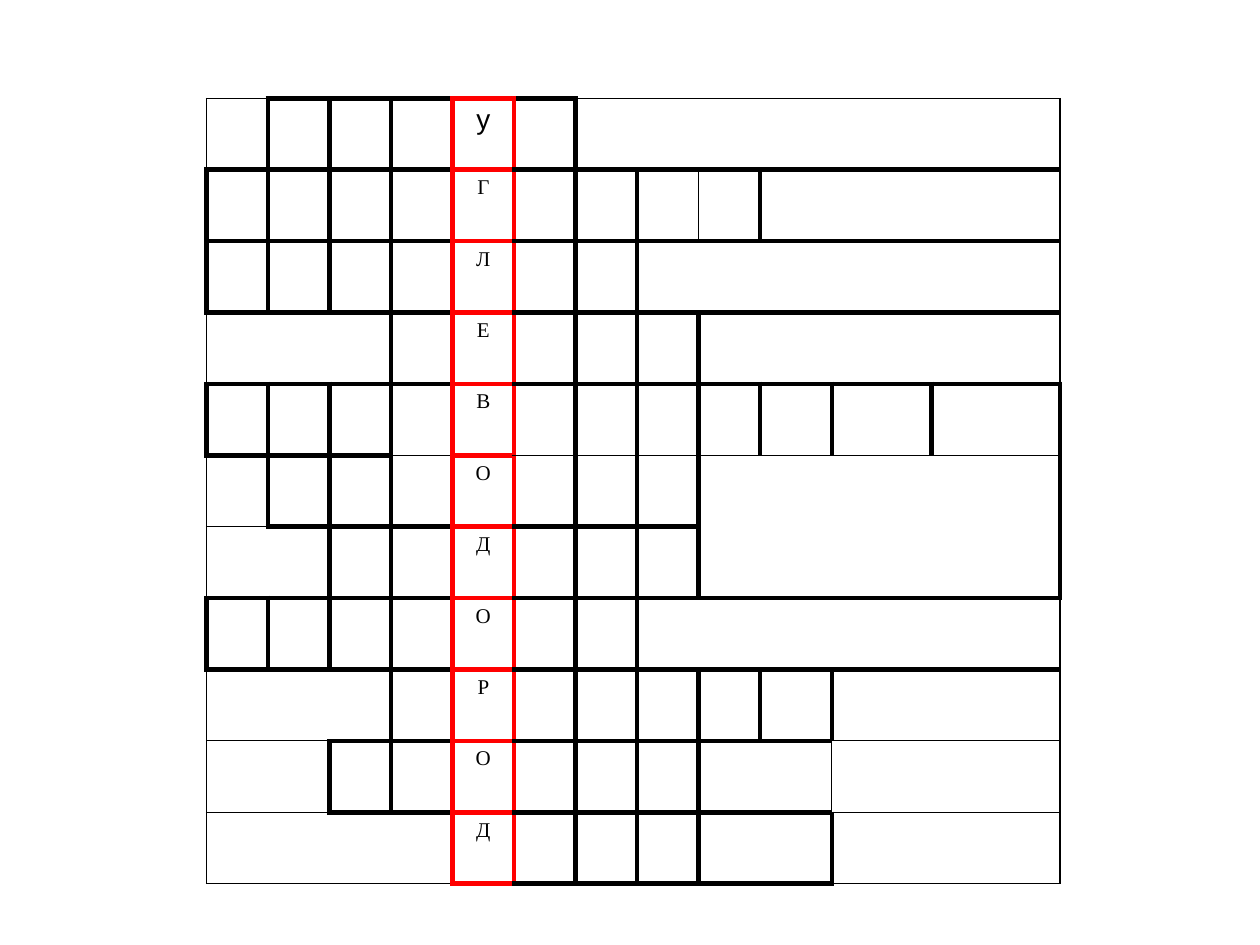
from dataclasses import dataclass

from lxml.etree import SubElement
from pptx import Presentation
from pptx.dml.color import RGBColor
from pptx.enum.text import PP_ALIGN as Align
from pptx.oxml.ns import qn
from pptx.table import Table, _Cell as TableCell
from pptx.util import Pt


@dataclass(frozen=True)
class Theme:
    ink: str = "000000"
    keyword: str = "FF0000"
    thick: float = 3
    medium: float = 1
    thin: float = 0.75
    first_font: str = "Arial"
    first_size: float = 16
    font: str = "Times New Roman"
    size: float = 12


THEME = Theme()
THICK, MEDIUM, THIN = THEME.thick, THEME.medium, THEME.thin


@dataclass(frozen=True)
class Box:
    """A crossword cell: how many columns and rows it covers, and its edge widths."""
    columns: int = 1
    rows: int = 1
    left: float = THICK
    top: float = THICK
    right: float = THICK
    bottom: float = THICK


KEYWORD = "уГЛЕВОДОРОД"
KEYWORD_COLUMN = 4
TABLE_LEFT, TABLE_TOP = 118, 56.2
COLUMN_WIDTHS = [35.15] * 9 + [41, 56.8, 73.6]
ROW_HEIGHT = 40.8
INDENT = 23
NO_STYLE = "{2D5ABB26-0587-4C30-8999-92F81FD0307C}"

# Boxes that differ from a single thick-edged cell, by (row, column).
BOXES = {
    (0, 0): Box(left=THIN, top=THIN),
    (0, 6): Box(6, top=THIN, right=THIN),
    (1, 7): Box(right=MEDIUM),
    (1, 8): Box(left=MEDIUM),
    (1, 9): Box(3, top=THIN, right=THIN, bottom=THIN),
    (2, 7): Box(5, right=THIN),
    (3, 0): Box(3, left=THIN),
    (3, 8): Box(4, top=THIN, right=THIN),
    **{(4, column): Box(bottom=MEDIUM) for column in (3, *range(5, 12))},
    (5, 0): Box(left=THIN, bottom=THIN),
    **{(5, column): Box(top=MEDIUM) for column in (3, 5, 6, 7)},
    (5, 8): Box(4, 2, top=MEDIUM, bottom=THIN),
    (6, 0): Box(2, left=THIN, top=THIN),
    (7, 7): Box(5, right=THIN),
    (8, 0): Box(3, left=THIN, bottom=THIN),
    (8, 10): Box(2, top=THIN, right=THIN, bottom=THIN),
    (9, 0): Box(2, left=THIN, top=THIN, bottom=THIN),
    (9, 8): Box(2, right=THIN),
    (9, 10): Box(2, left=THIN, top=THIN, right=THIN, bottom=THIN),
    (10, 0): Box(4, left=THIN, top=THIN, bottom=THIN),
    (10, 8): Box(2),
    (10, 10): Box(2, top=THIN, right=THIN, bottom=THIN),
}


def add_edge(cell: TableCell, tag: str, width: float, color: str) -> None:
    properties = cell._tc.get_or_add_tcPr()
    line = SubElement(properties, qn(tag), w=str(Pt(width)), cap="flat", cmpd="sng")
    SubElement(SubElement(line, qn("a:solidFill")), qn("a:srgbClr"), val=color)
    SubElement(line, qn("a:prstDash"), val="solid")


def draw_box(table: Table, row: int, column: int, box: Box) -> None:
    """Merge the covered cells and draw the edges, red beside the keyword."""
    last_row, last_column = row + box.rows - 1, column + box.columns - 1
    in_keyword = column == KEYWORD_COLUMN
    across = THEME.keyword if in_keyword else THEME.ink
    left = THEME.keyword if in_keyword or column == KEYWORD_COLUMN + 1 else THEME.ink
    right = THEME.keyword if in_keyword or last_column == KEYWORD_COLUMN - 1 else THEME.ink
    if box.columns > 1 or box.rows > 1:
        table.cell(row, column).merge(table.cell(last_row, last_column))
    for y in range(row, last_row + 1):
        for x in range(column, last_column + 1):
            cell = table.cell(y, x)
            origin = (y, x) == (row, column)
            edges = (
                ("a:lnL", x == column, box.left, left),
                ("a:lnR", x == last_column, box.right, right),
                ("a:lnT", y == row, box.top, across),
                ("a:lnB", y == last_row, box.bottom, across),
            )
            for tag, outer, width, color in edges:
                if outer or origin:
                    add_edge(cell, tag, width, color)
            cell.fill.background()


def write_letter(cell: TableCell, letter: str, font: str, size: float) -> None:
    paragraph = cell.text_frame.paragraphs[0]
    paragraph.alignment = Align.CENTER
    properties = paragraph._p.get_or_add_pPr()
    properties.set("marL", str(Pt(INDENT)))
    properties.set("indent", str(-Pt(INDENT)))
    run = paragraph.add_run()
    run.text = letter
    run.font.name = font
    run.font.size = Pt(size)
    run.font.color.rgb = RGBColor.from_string(THEME.ink)


def add_crossword(slide) -> None:
    row_count, column_count = len(KEYWORD), len(COLUMN_WIDTHS)
    frame = slide.shapes.add_table(
        row_count, column_count, Pt(TABLE_LEFT), Pt(TABLE_TOP),
        Pt(sum(COLUMN_WIDTHS)), Pt(ROW_HEIGHT * row_count))
    table = frame.table
    table.first_row = table.horz_banding = False
    table._tbl.tblPr.find(qn("a:tableStyleId")).text = NO_STYLE
    for column, width in zip(table.columns, COLUMN_WIDTHS):
        column.width = Pt(width)
    for row in table.rows:
        row.height = Pt(ROW_HEIGHT)
    for y, letter in enumerate(KEYWORD):
        for x in range(column_count):
            if not table.cell(y, x).is_spanned:
                draw_box(table, y, x, BOXES.get((y, x), Box()))
        font, size = (THEME.font, THEME.size) if y else (THEME.first_font, THEME.first_size)
        write_letter(table.cell(y, KEYWORD_COLUMN), letter, font, size)


def main() -> None:
    presentation = Presentation()
    presentation.slide_width, presentation.slide_height = Pt(720), Pt(540)
    slide = presentation.slides.add_slide(presentation.slide_layouts[6])
    add_crossword(slide)
    presentation.save("out.pptx")


if __name__ == "__main__":
    main()
